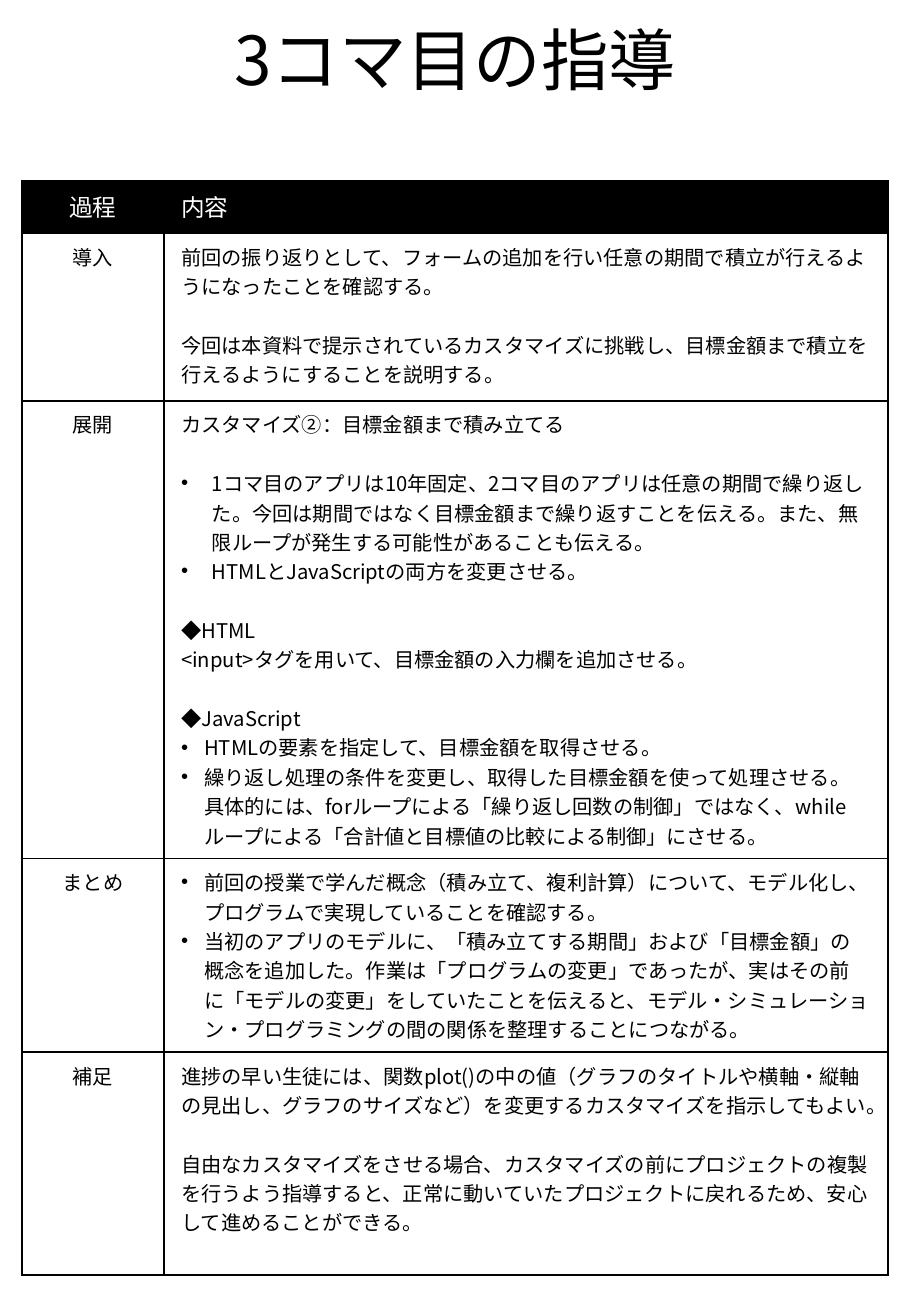
from dataclasses import dataclass

from lxml import etree
from pptx import Presentation
from pptx.dml.color import RGBColor
from pptx.enum import text as t
from pptx.oxml import ns
from pptx.util import Cm, Pt


@dataclass(frozen=True)
class Theme:
    font: str = "Noto Sans CJK JP"
    ink: RGBColor = RGBColor(0, 0, 0)
    paper: RGBColor = RGBColor(255, 255, 255)
    title: int = 40
    head: int = 14
    body: int = 12
    gap: float = 17.4  # one line of body text
    rule: int = 1


theme = Theme()
WIDE, SLIM = 0.64, 0.48  # bullet indents in cm

# Each paragraph: text, bullet indent (0 for none), gap above
lesson = [
    ("過程", 1.1, [("内容", 0, False)]),
    ("導入", 3.5, [
        ("前回の振り返りとして、フォームの追加を行い任意の期間で積立が行えるようになったことを確認する。", 0, False),
        ("今回は本資料で提示されているカスタマイズに挑戦し、目標金額まで積立を行えるようにすることを説明する。", 0, True),
    ]),
    ("展開", 8.2, [
        ("カスタマイズ②：目標金額まで積み立てる", 0, False),
        ("1コマ目のアプリは10年固定、2コマ目のアプリは任意の期間で繰り返した。今回は期間ではなく目標金額まで"
         "繰り返すことを伝える。また、無限ループが発生する可能性があることも伝える。", WIDE, True),
        ("HTMLとJavaScriptの両方を変更させる。", WIDE, False),
        ("◆HTML", 0, True),
        ("<input>タグを用いて、目標金額の入力欄を追加させる。", 0, False),
        ("◆JavaScript", 0, True),
        ("HTMLの要素を指定して、目標金額を取得させる。", SLIM, False),
        ("繰り返し処理の条件を変更し、取得した目標金額を使って処理させる。具体的には、forループによる"
         "「繰り返し回数の制御」ではなく、whileループによる「合計値と目標値の比較による制御」にさせる。", SLIM, False),
    ]),
    ("まとめ", 3.25, [
        ("前回の授業で学んだ概念（積み立て、複利計算）について、モデル化し、プログラムで実現していることを確認する。", SLIM, False),
        ("当初のアプリのモデルに、「積み立てする期間」および「目標金額」の概念を追加した。作業は"
         "「プログラムの変更」であったが、実はその前に「モデルの変更」をしていたことを伝えると、"
         "モデル・シミュレーション・プログラミングの間の関係を整理することにつながる。", SLIM, False),
    ]),
    ("補足", 2.67, [
        ("進捗の早い生徒には、関数plot()の中の値（グラフのタイトルや横軸・縦軸の見出し、グラフのサイズなど）を"
         "変更するカスタマイズを指示してもよい。", 0, False),
        ("自由なカスタマイズをさせる場合、カスタマイズの前にプロジェクトの複製を行うよう指導すると、"
         "正常に動いていたプロジェクトに戻れるため、安心して進めることができる。", 0, True),
    ]),
]


def write(para, words, size, color):
    """Add one run in the theme font, for Latin and Japanese alike."""
    run = para.add_run()
    run.text = words
    font = run.font
    font.name, font.size, font.bold = theme.font, Pt(size), False
    font.color.rgb = color
    east = etree.SubElement(font._element, ns.qn("a:ea"))
    east.set("typeface", theme.font)


def dress(cell, fill):
    """Set fill, margins and a thin rule on all four sides."""
    cell.fill.solid()
    cell.fill.fore_color.rgb = fill
    cell.margin_left = cell.margin_right = Cm(0.36)
    cell.margin_top = cell.margin_bottom = Cm(0.18)
    props = cell._tc.get_or_add_tcPr()
    for spot, side in enumerate(("lnL", "lnR", "lnT", "lnB")):
        line = etree.Element(ns.qn(f"a:{side}"), w=str(Pt(theme.rule)))
        solid = etree.SubElement(line, ns.qn("a:solidFill"))
        etree.SubElement(solid, ns.qn("a:srgbClr"), val=str(theme.ink))
        props.insert(spot, line)


deck = Presentation()
deck.slide_width, deck.slide_height = Cm(19.05), Cm(27.51)
slide = deck.slides.add_slide(deck.slide_layouts[5])

title = slide.shapes.title
title.left, title.top = Cm(1.42), Cm(0.15)
title.width, title.height = Cm(16.2), Cm(2.06)
frame = title.text_frame
frame.auto_size = t.MSO_AUTO_SIZE.NONE
frame.vertical_anchor = t.MSO_ANCHOR.BOTTOM
para = frame.paragraphs[0]
para.alignment = t.PP_ALIGN.CENTER
para.line_spacing = 0.9
write(para, "3コマ目の指導", theme.title, theme.ink)

widths = (2.97, 15.14)
total = sum(height for _, height, _ in lesson)
table = slide.shapes.add_table(
    len(lesson), len(widths), Cm(0.46), Cm(3.78), Cm(sum(widths)), Cm(total)
).table
table.horz_banding = False
for col, width in zip(table.columns, widths):
    col.width = Cm(width)

for num, (stage, height, notes) in enumerate(lesson):
    row = table.rows[num]
    row.height = Cm(height)
    if num == 0:
        size, color, fill = theme.head, theme.paper, theme.ink
    else:
        size, color, fill = theme.body, theme.ink, theme.paper
    label, detail = row.cells
    dress(label, fill)
    dress(detail, fill)

    para = label.text_frame.paragraphs[0]
    para.alignment = t.PP_ALIGN.CENTER
    write(para, stage, size, color)

    frame = detail.text_frame
    for spot, (words, indent, gap) in enumerate(notes):
        para = frame.add_paragraph() if spot else frame.paragraphs[0]
        if gap:
            para.space_before = Pt(theme.gap)
        if indent:
            props = para._p.get_or_add_pPr()
            props.set("marL", str(Cm(indent)))
            props.set("indent", str(-Cm(indent)))
            etree.SubElement(props, ns.qn("a:buFont"), typeface="Arial")
            etree.SubElement(props, ns.qn("a:buChar"), char="•")
        write(para, words, size, color)

deck.save("out.pptx")
